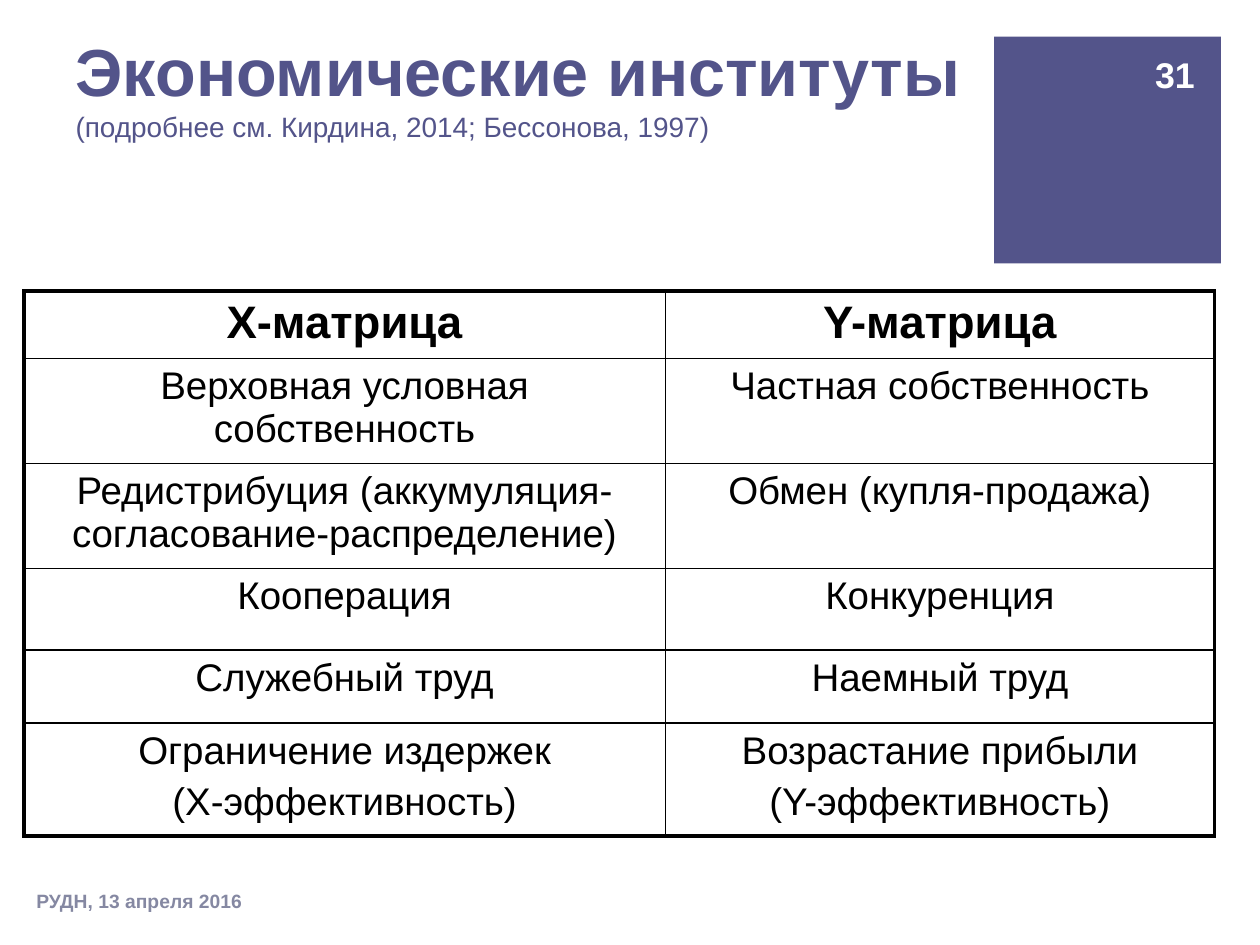
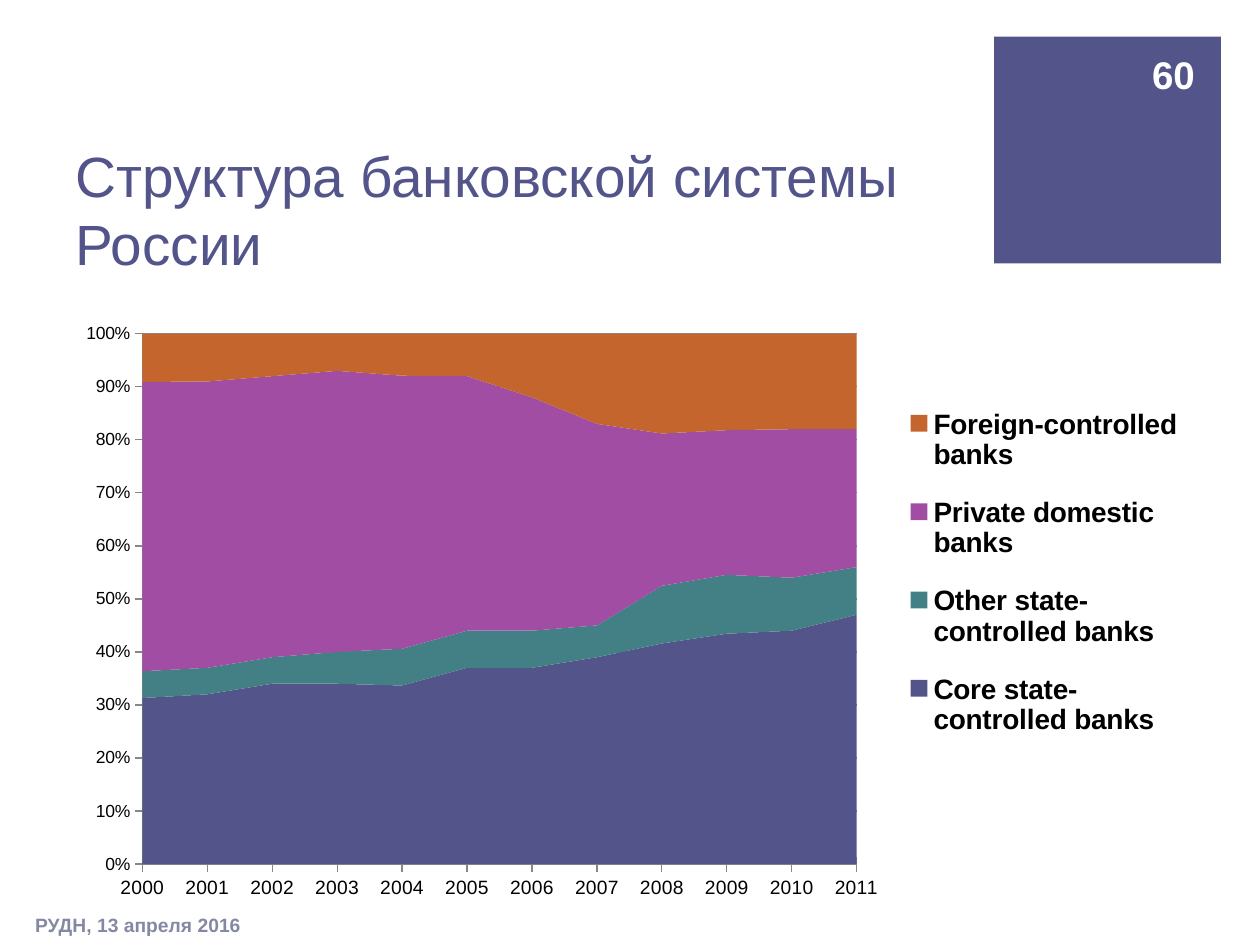
from dataclasses import dataclass

from lxml import etree
from pptx import Presentation
from pptx.chart.data import CategoryChartData
from pptx.dml.color import RGBColor
from pptx.enum.chart import XL_CHART_TYPE, XL_LEGEND_POSITION, XL_TICK_MARK
from pptx.enum.shapes import MSO_SHAPE
from pptx.enum.text import MSO_ANCHOR, MSO_AUTO_SIZE, PP_ALIGN
from pptx.oxml.ns import qn
from pptx.util import Inches, Pt

AREA_100 = XL_CHART_TYPE.AREA_STACKED_100
LEGEND_RIGHT = XL_LEGEND_POSITION.RIGHT
TICK_CROSS = XL_TICK_MARK.CROSS
RECTANGLE = MSO_SHAPE.RECTANGLE
BOTTOM, MIDDLE = MSO_ANCHOR.BOTTOM, MSO_ANCHOR.MIDDLE
NO_AUTOFIT = MSO_AUTO_SIZE.NONE
LEFT, CENTER, RIGHT = PP_ALIGN.LEFT, PP_ALIGN.CENTER, PP_ALIGN.RIGHT

SLIDE_W, SLIDE_H = Inches(10), Inches(7.5)
TITLE_ONLY = 5


@dataclass(frozen=True)
class Theme:
    font: str = "Arial"
    indigo: str = "53548A"
    teal: str = "438086"
    purple: str = "A04DA3"
    orange: str = "C4652D"
    muted: str = "8588A2"
    axis: str = "878787"
    black: str = "000000"
    white: str = "FFFFFF"
    heading: float = 38
    long_heading: float = 32.4
    reference: float = 16
    column_head: float = 26
    cell: float = 22
    footer: float = 11
    legend: float = 16
    years: float = 11
    percents: float = 10
    rule: float = 1
    frame: float = 2.25


THEME = Theme()


@dataclass(frozen=True)
class Box:
    left: int
    top: int
    width: int
    height: int

    def inner(self, x, y, w, h):
        """Inner box, given in percent of this one."""
        return Box(self.left + int(self.width * x / 100),
                   self.top + int(self.height * y / 100),
                   int(self.width * w / 100), int(self.height * h / 100))

    @property
    def bounds(self):
        return self.left, self.top, self.width, self.height


PAGE = Box(0, 0, SLIDE_W, SLIDE_H)
CORNER = PAGE.inner(78.9, 3.87, 18, 24)

MATRIX_COLUMNS = (509, 436)
MATRIX_ROWS = (50, 82, 82, 65, 58, 84)
MATRICES = (
    ("Х-матрица", "Y-матрица"),
    ("Верховная условная собственность", "Частная собственность"),
    ("Редистрибуция (аккумуляция-согласование-распределение)",
     "Обмен (купля-продажа)"),
    ("Кооперация", "Конкуренция"),
    ("Служебный труд", "Наемный труд"),
    ("Ограничение издержек\n(Х-эффективность)",
     "Возрастание прибыли\n(Y-эффективность)"),
)

YEARS = [str(year) for year in range(2000, 2012)]
BANK_SHARES = (
    ("Core state-controlled banks", THEME.indigo,
     (31, 32, 34, 34, 34, 37, 37, 39, 42, 43, 44, 47)),
    ("Other state-controlled banks", THEME.teal,
     (5, 5, 5, 6, 7, 7, 7, 6, 11, 11, 10, 9)),
    ("Private domestic banks", THEME.purple,
     (54, 54, 53, 53, 52, 48, 44, 38, 29, 27, 28, 26)),
    ("Foreign-controlled banks", THEME.orange,
     (9, 9, 8, 7, 8, 8, 12, 17, 19, 18, 18, 18)),
)


def set_font(font, size, color, bold=False):
    font.name, font.size, font.bold = THEME.font, Pt(size), bold
    font.color.rgb = RGBColor.from_string(color)


def add_label(slide, box, text, size, color, align=LEFT):
    frame = slide.shapes.add_textbox(*box.bounds).text_frame
    frame.word_wrap = True
    frame.vertical_anchor = MIDDLE
    line = frame.paragraphs[0]
    line.text, line.alignment = text, align
    set_font(line.font, size, color, bold=True)


def add_corner(slide, box, number, size):
    square = slide.shapes.add_shape(RECTANGLE, *box.bounds)
    square.shadow.inherit = False
    square.fill.solid()
    square.fill.fore_color.rgb = RGBColor.from_string(THEME.indigo)
    square.line.fill.background()
    add_label(slide, box.inner(63.3, 5.6, 30.6, 22.2), number, size,
              THEME.white, RIGHT)


def add_title(slide, box, heading, size, bold=False, reference=None):
    title = slide.shapes.title
    title.left, title.top, title.width, title.height = box.bounds
    frame = title.text_frame
    frame.auto_size, frame.vertical_anchor = NO_AUTOFIT, BOTTOM
    frame.word_wrap = True
    line = frame.paragraphs[0]
    line.alignment = LEFT
    heading_run = line.add_run()
    heading_run.text = heading
    set_font(heading_run.font, size, THEME.indigo, bold)
    if reference:
        line.add_line_break()
        reference_run = line.add_run()
        reference_run.text = reference
        set_font(reference_run.font, THEME.reference, THEME.indigo)


def start_slide(deck, number, number_size, footer_box):
    """Add a slide with the parts common to all: corner square and footer."""
    slide = deck.slides.add_slide(deck.slide_layouts[TITLE_ONLY])
    add_corner(slide, CORNER, number, number_size)
    add_label(slide, footer_box, "РУДН, 13 апреля 2016", THEME.footer,
              THEME.muted)
    return slide


def set_borders(cell, widths):
    """Draw black borders, widths in points for left, right, top, bottom."""
    properties = cell._tc.get_or_add_tcPr()
    for side, width in zip("LRTB", widths):
        border = etree.SubElement(properties, qn(f"a:ln{side}"), w=str(Pt(width)))
        fill = etree.SubElement(border, qn("a:solidFill"))
        etree.SubElement(fill, qn("a:srgbClr"), val=THEME.black)


def fill_cell(cell, text, size, bold):
    cell.fill.background()
    cell.text = text
    for index, line in enumerate(cell.text_frame.paragraphs):
        line.alignment = CENTER
        line.space_before = Pt(0.2 * size if index else 0)
        set_font(line.font, size, THEME.black, bold)


def add_matrix_table(slide, box):
    row_count, column_count = len(MATRIX_ROWS), len(MATRIX_COLUMNS)
    table = slide.shapes.add_table(row_count, column_count, *box.bounds).table
    table.first_row = table.horz_banding = False
    for column, share in zip(table.columns, MATRIX_COLUMNS):
        column.width = box.width * share // sum(MATRIX_COLUMNS)
    for row, share in zip(table.rows, MATRIX_ROWS):
        row.height = box.height * share // sum(MATRIX_ROWS)
    for r, texts in enumerate(MATRICES):
        for c, text in enumerate(texts):
            cell = table.cell(r, c)
            outer_sides = (c == 0, c == column_count - 1,
                           r == 0, r == row_count - 1)
            set_borders(cell, [THEME.frame if outer else THEME.rule
                               for outer in outer_sides])
            is_head = r == 0
            fill_cell(cell, text, THEME.column_head if is_head else THEME.cell,
                      is_head)


def make_layout(x, y, w, h, inner=False):
    """Manual chart layout, in shares of the chart's size."""
    layout = etree.Element(qn("c:layout"))
    manual = etree.SubElement(layout, qn("c:manualLayout"))
    settings = [("layoutTarget", "inner")] if inner else []
    settings += [("xMode", "edge"), ("yMode", "edge"),
                 ("x", x), ("y", y), ("w", w), ("h", h)]
    for tag, value in settings:
        etree.SubElement(manual, qn(f"c:{tag}"), val=str(value))
    return layout


def place_chart_areas(chart):
    plot_area = chart._chartSpace.chart.plotArea
    legend = chart.legend._element
    for holder in (plot_area, legend):
        for layout in holder.findall(qn("c:layout")):
            holder.remove(layout)
    plot_area.insert(0, make_layout(0.07, 0.04, 0.63, 0.89, inner=True))
    legend.find(qn("c:overlay")).addprevious(make_layout(0.74, 0.12, 0.25, 0.64))


def add_bank_chart(slide, box):
    data = CategoryChartData(number_format="0")
    data.categories = YEARS
    for name, _, shares in BANK_SHARES:
        data.add_series(name, shares)
    chart = slide.shapes.add_chart(AREA_100, *box.bounds, data).chart
    chart.has_title = False
    set_font(chart.font, THEME.percents, THEME.black)

    plot = chart.plots[0]
    plot.vary_by_categories = False
    for series, (_, color, _) in zip(plot.series, BANK_SHARES):
        series.format.fill.solid()
        series.format.fill.fore_color.rgb = RGBColor.from_string(color)

    percents, years = chart.value_axis, chart.category_axis
    for axis, size in ((percents, THEME.percents), (years, THEME.years)):
        axis.major_tick_mark = TICK_CROSS
        axis.format.line.color.rgb = RGBColor.from_string(THEME.axis)
        set_font(axis.tick_labels.font, size, THEME.black)
    percents.has_major_gridlines = True
    percents.major_gridlines.format.line.color.rgb = RGBColor.from_string(THEME.axis)
    percents.maximum_scale, percents.major_unit = 1, 0.1
    percents.tick_labels.number_format = "0%"
    percents.tick_labels.number_format_is_linked = False

    chart.has_legend = True
    chart.legend.position = LEGEND_RIGHT
    chart.legend.include_in_layout = False
    set_font(chart.legend.font, THEME.legend, THEME.black, bold=True)
    place_chart_areas(chart)


def build_institutions(deck):
    slide = start_slide(deck, "31", 20.4, PAGE.inner(1.9, 92.67, 65.7, 5.33))
    add_title(slide, PAGE.inner(5, 1.73, 82.5, 14.13), "Экономические институты",
              THEME.heading, bold=True,
              reference="(подробнее см. Кирдина, 2014; Бессонова, 1997)")
    add_matrix_table(slide, PAGE.inner(1.9, 30.8, 94.5, 56.13))


def build_banking(deck):
    slide = start_slide(deck, "60", 22, PAGE.inner(1.8, 95.87, 39, 4))
    add_title(slide, PAGE.inner(5, 13.33, 71.2, 16.67),
              "Структура банковской системы России", THEME.long_heading)
    add_bank_chart(slide, PAGE.inner(5, 32.8, 90, 63.07))


def main():
    deck = Presentation()
    deck.slide_width, deck.slide_height = SLIDE_W, SLIDE_H
    build_institutions(deck)
    build_banking(deck)
    deck.save("out.pptx")


if __name__ == "__main__":
    main()
